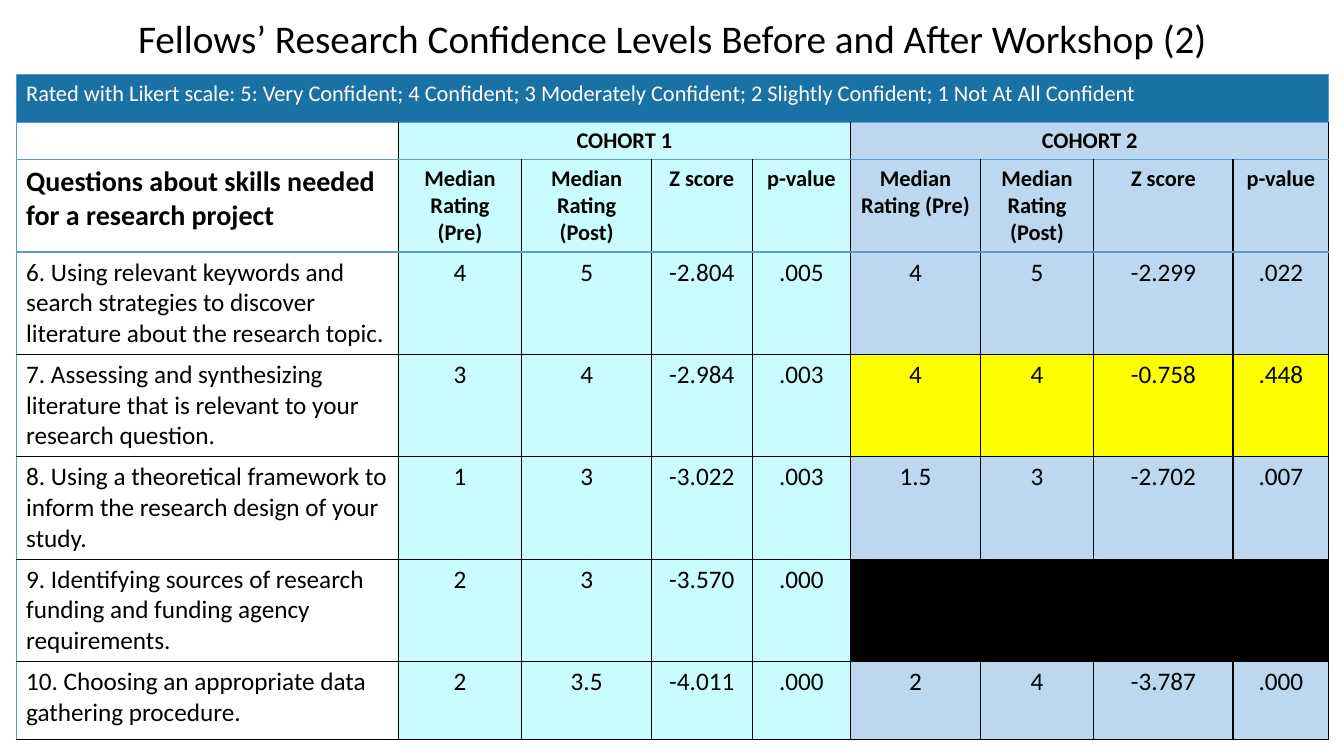
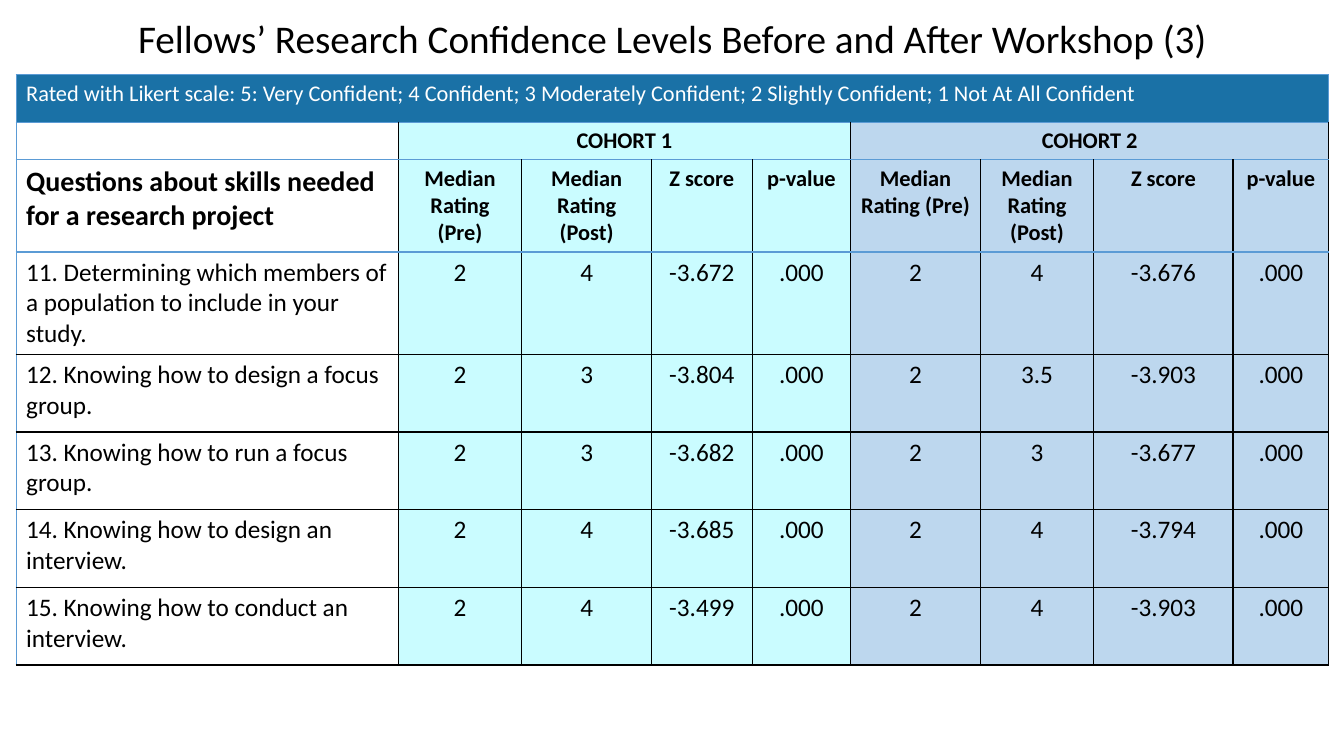
from lxml.etree import SubElement
from pptx import Presentation
from pptx.dml.color import RGBColor
from pptx.enum.text import MSO_ANCHOR, MSO_AUTO_SIZE, PP_ALIGN
from pptx.oxml.ns import qn
from pptx.util import Pt

FONT = "Calibri"
BLACK = RGBColor(0x00, 0x00, 0x00)
WHITE = RGBColor(0xFF, 0xFF, 0xFF)
BANNER_BLUE = RGBColor(0x1A, 0x71, 0xA6)
RULE_BLUE = RGBColor(0x5B, 0x9B, 0xD5)
COHORT_1_CYAN = RGBColor(0xCA, 0xFC, 0xFF)
COHORT_2_BLUE = RGBColor(0xBD, 0xD7, 0xEE)
HIGHLIGHT_YELLOW = RGBColor(0xFF, 0xFF, 0x00)

TITLE_BOX = (23, 6.5, 914.4, 41)
TABLE_BOX = (11.5, 53.5, 937.7, 440)
COLUMN_WIDTHS = [272.9, 88.4, 92.5, 72, 70.4, 92.5, 81.2, 99.4, 68.4]
HEADER_HEIGHTS = [33.8, 26.5, 65]
BODY_HEIGHTS = [48, 55.5, 55.5, 55.5, 55.5]
COHORT_SIZE = 4
SIGNIFICANCE = 0.05

TITLE = "Fellows’ Research Confidence Levels Before and After Workshop ({})"
SCALE = ("Rated with Likert scale: 5: Very Confident; 4 Confident; "
         "3 Moderately Confident; 2 Slightly Confident; 1 Not At All Confident")
COLUMN_HEADS = [
    "Questions about skills needed for a research project",
    "Median Rating\n(Pre)", "Median Rating\n(Post)", "Z score", "p-value",
    "Median Rating (Pre)", "Median Rating (Post)", "Z score", "p-value",
]

# Each row: question, cohort 1 values, cohort 2 values (pre, post, Z, p)
SLIDES = {
    2: [
        ("6. Using relevant keywords and search strategies to discover "
         "literature about the research topic.",
         "4 5 -2.804 .005", "4 5 -2.299 .022"),
        ("7. Assessing and synthesizing literature that is relevant to your "
         "research question.", "3 4 -2.984 .003", "4 4 -0.758 .448"),
        ("8. Using a theoretical framework to inform the research design of "
         "your study.", "1 3 -3.022 .003", "1.5 3 -2.702 .007"),
        ("9. Identifying sources of research funding and funding agency "
         "requirements.", "2 3 -3.570 .000", ""),
        ("10. Choosing an appropriate data gathering procedure.",
         "2 3.5 -4.011 .000", "2 4 -3.787 .000"),
    ],
    3: [
        ("11. Determining which members of a population to include in your "
         "study.", "2 4 -3.672 .000", "2 4 -3.676 .000"),
        ("12. Knowing how to design a focus group.",
         "2 3 -3.804 .000", "2 3.5 -3.903 .000"),
        ("13. Knowing how to run a focus group.",
         "2 3 -3.682 .000", "2 3 -3.677 .000"),
        ("14. Knowing how to design an interview.",
         "2 4 -3.685 .000", "2 4 -3.794 .000"),
        ("15. Knowing how to conduct an interview.",
         "2 4 -3.499 .000", "2 4 -3.903 .000"),
    ],
}


def set_borders(cell, row, column):
    """Blue rules frame the header rows and the left edge; the rest is black."""
    colors = {
        "a:lnL": RULE_BLUE if row == 0 or column == 0 else BLACK,
        "a:lnR": RULE_BLUE if row == 0 else BLACK,
        "a:lnT": RULE_BLUE if row <= len(HEADER_HEIGHTS) else BLACK,
        "a:lnB": RULE_BLUE if row < len(HEADER_HEIGHTS) else BLACK,
    }
    properties = cell._tc.get_or_add_tcPr()
    for tag, color in colors.items():
        line = SubElement(properties, qn(tag), w=str(Pt(1)))
        fill = SubElement(line, qn("a:solidFill"))
        SubElement(fill, qn("a:srgbClr"), val=str(color))


def fill_cell(cell, text, size, fill=None, color=BLACK, bold=False, centered=False):
    if fill is None:
        cell.fill.background()
    else:
        cell.fill.solid()
        cell.fill.fore_color.rgb = fill
    if not text:
        cell.margin_top = cell.margin_bottom = 0
        return
    cell.text_frame.text = text
    for paragraph in cell.text_frame.paragraphs:
        paragraph.alignment = PP_ALIGN.CENTER if centered else PP_ALIGN.LEFT
        font = paragraph.font
        font.name, font.size, font.bold = FONT, Pt(size), bold
        font.color.rgb = color


def cohort_color(column):
    if column == 0:
        return None
    return COHORT_1_CYAN if column <= COHORT_SIZE else COHORT_2_BLUE


def fill_header(table):
    fill_cell(table.cell(0, 0), SCALE, 16, BANNER_BLUE, WHITE)
    table.cell(0, 0).merge(table.cell(0, len(COLUMN_WIDTHS) - 1))

    fill_cell(table.cell(1, 0), "", 16)
    for number in (1, 2):
        first = 1 + (number - 1) * COHORT_SIZE
        cell = table.cell(1, first)
        fill_cell(cell, f"COHORT {number}", 16, cohort_color(first),
                  bold=True, centered=True)
        cell.merge(table.cell(1, first + COHORT_SIZE - 1))

    for column, head in enumerate(COLUMN_HEADS):
        fill_cell(table.cell(2, column), head, 16 if column else 20,
                  cohort_color(column), bold=True, centered=column > 0)


def fill_question(table, row, question, *cohorts):
    fill_cell(table.cell(row, 0), question, 18)
    for index, cohort in enumerate(cohorts):
        first = 1 + index * COHORT_SIZE
        values = cohort.split() or [""] * COHORT_SIZE
        if not cohort:
            fill = BLACK
        elif float(values[-1]) >= SIGNIFICANCE:
            fill = HIGHLIGHT_YELLOW
        else:
            fill = cohort_color(first)
        for column, value in enumerate(values, first):
            fill_cell(table.cell(row, column), value, 18, fill, centered=True)


def add_ratings_table(slide, box, questions):
    heights = HEADER_HEIGHTS + BODY_HEIGHTS
    table = slide.shapes.add_table(
        len(heights), len(COLUMN_WIDTHS), *map(Pt, box)).table
    table.first_row = table.horz_banding = False
    for column, width in zip(table.columns, COLUMN_WIDTHS):
        column.width = Pt(width)
    for row, height in zip(table.rows, heights):
        row.height = Pt(height)
    for row in range(len(heights)):
        for column in range(len(COLUMN_WIDTHS)):
            set_borders(table.cell(row, column), row, column)
    fill_header(table)
    for row, question in enumerate(questions, len(HEADER_HEIGHTS)):
        fill_question(table, row, *question)


def add_title(slide, box, text):
    title = slide.shapes.title
    title.left, title.top, title.width, title.height = map(Pt, box)
    frame = title.text_frame
    frame.text = text
    frame.word_wrap = True
    frame.auto_size = MSO_AUTO_SIZE.NONE
    frame.vertical_anchor = MSO_ANCHOR.TOP
    paragraph = frame.paragraphs[0]
    paragraph.alignment = PP_ALIGN.CENTER
    paragraph.font.name, paragraph.font.size = FONT, Pt(28)
    paragraph.font.color.rgb = BLACK


def main():
    presentation = Presentation()
    presentation.slide_width, presentation.slide_height = Pt(960), Pt(540)
    for number, questions in SLIDES.items():
        slide = presentation.slides.add_slide(presentation.slide_layouts[5])
        add_title(slide, TITLE_BOX, TITLE.format(number))
        add_ratings_table(slide, TABLE_BOX, questions)
    presentation.save("out.pptx")


if __name__ == "__main__":
    main()
